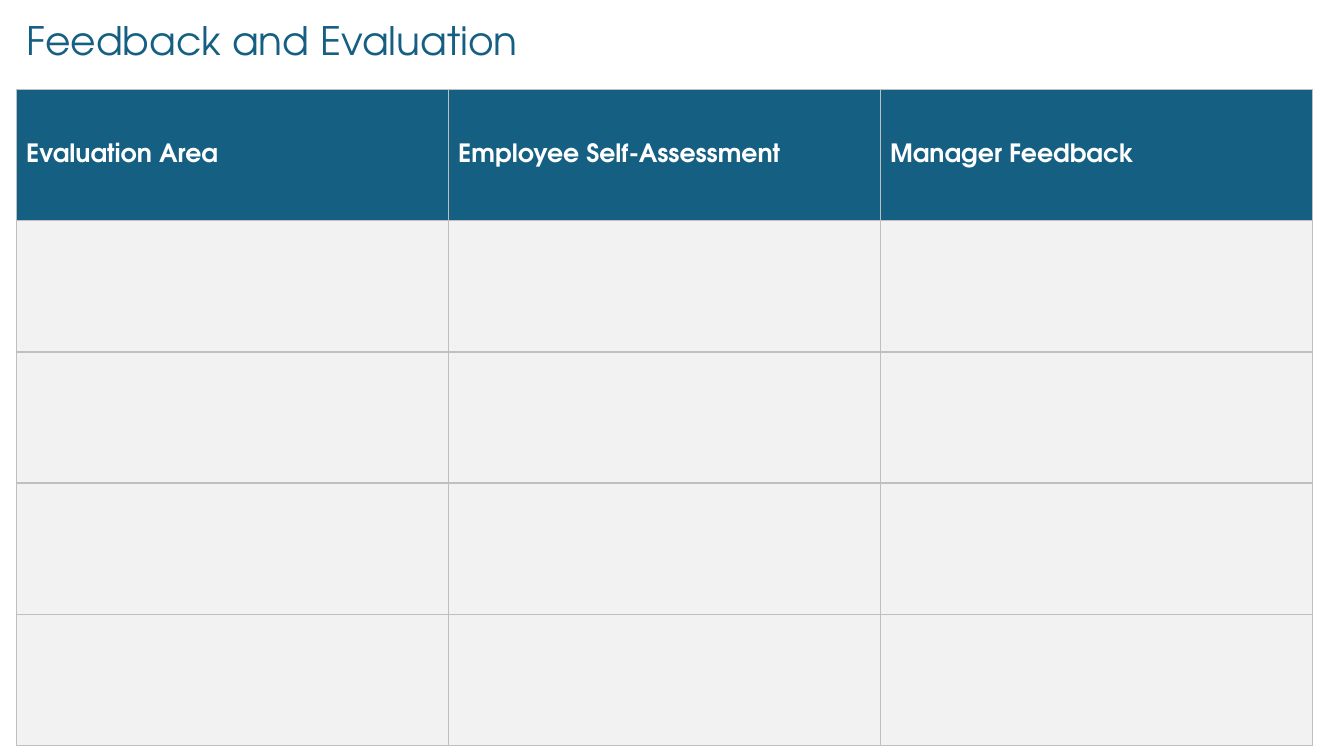
from lxml.etree import SubElement
from pptx import Presentation
from pptx.dml.color import RGBColor
from pptx.enum.text import MSO_ANCHOR, MSO_AUTO_SIZE, PP_ALIGN
from pptx.oxml.ns import qn
from pptx.util import Pt

# Content
TITLE = "Feedback and Evaluation"
HEADERS = ("Evaluation Area", "Employee Self-Assessment", "Manager Feedback")
BLANK_ROWS = 4

# Style and layout, in points
FONT = "TeX Gyre Adventor"
BLUE, WHITE, PALE, GREY = "156082", "FFFFFF", "F2F2F2", "BFBFBF"
LEFT = 11.5
TITLE_TOP, TITLE_WIDTH, TITLE_HEIGHT = 8, 582, 41
TABLE_TOP, COLUMN_WIDTH, ROW_HEIGHT = 64, 308.6, 93.7
BORDER_WIDTH = 1


def color(hex_string):
    return RGBColor.from_string(hex_string)


def add_run(paragraph, text, size, hex_string, bold=False):
    run = paragraph.add_run()
    run.text = text
    run.font.name = FONT
    run.font.size = Pt(size)
    run.font.bold = bold
    run.font.color.rgb = color(hex_string)


def set_borders(cell):
    properties = cell._tc.get_or_add_tcPr()
    for position, side in enumerate(("lnL", "lnR", "lnT", "lnB")):
        line = SubElement(properties, qn(f"a:{side}"), w=str(Pt(BORDER_WIDTH)))
        fill = SubElement(line, qn("a:solidFill"))
        SubElement(fill, qn("a:srgbClr"), val=GREY)
        # Borders come before the cell fill in the schema
        properties.insert(position, line)


presentation = Presentation()
presentation.slide_width = Pt(960)
presentation.slide_height = Pt(540)
slide = presentation.slides.add_slide(presentation.slide_layouts[5])

# Title
title = slide.shapes.title
title.left, title.top = Pt(LEFT), Pt(TITLE_TOP)
title.width, title.height = Pt(TITLE_WIDTH), Pt(TITLE_HEIGHT)
frame = title.text_frame
frame.word_wrap = True
frame.auto_size = MSO_AUTO_SIZE.SHAPE_TO_FIT_TEXT
frame.vertical_anchor = MSO_ANCHOR.TOP
frame.paragraphs[0].alignment = PP_ALIGN.LEFT
add_run(frame.paragraphs[0], TITLE, 28, BLUE)

# Evaluation table
row_count = 1 + BLANK_ROWS
table = slide.shapes.add_table(
    row_count, len(HEADERS), Pt(LEFT), Pt(TABLE_TOP),
    Pt(COLUMN_WIDTH * len(HEADERS)), Pt(ROW_HEIGHT * row_count),
).table
for column in table.columns:
    column.width = Pt(COLUMN_WIDTH)
for row in table.rows:
    row.height = Pt(ROW_HEIGHT)

for cell in table.iter_cells():
    cell.fill.solid()
    cell.fill.fore_color.rgb = color(PALE)
    cell.vertical_anchor = MSO_ANCHOR.MIDDLE
    set_borders(cell)

# Header row
for cell, header in zip(table.rows[0].cells, HEADERS):
    cell.fill.fore_color.rgb = color(BLUE)
    add_run(cell.text_frame.paragraphs[0], header, 18, WHITE, bold=True)

presentation.save("out.pptx")
